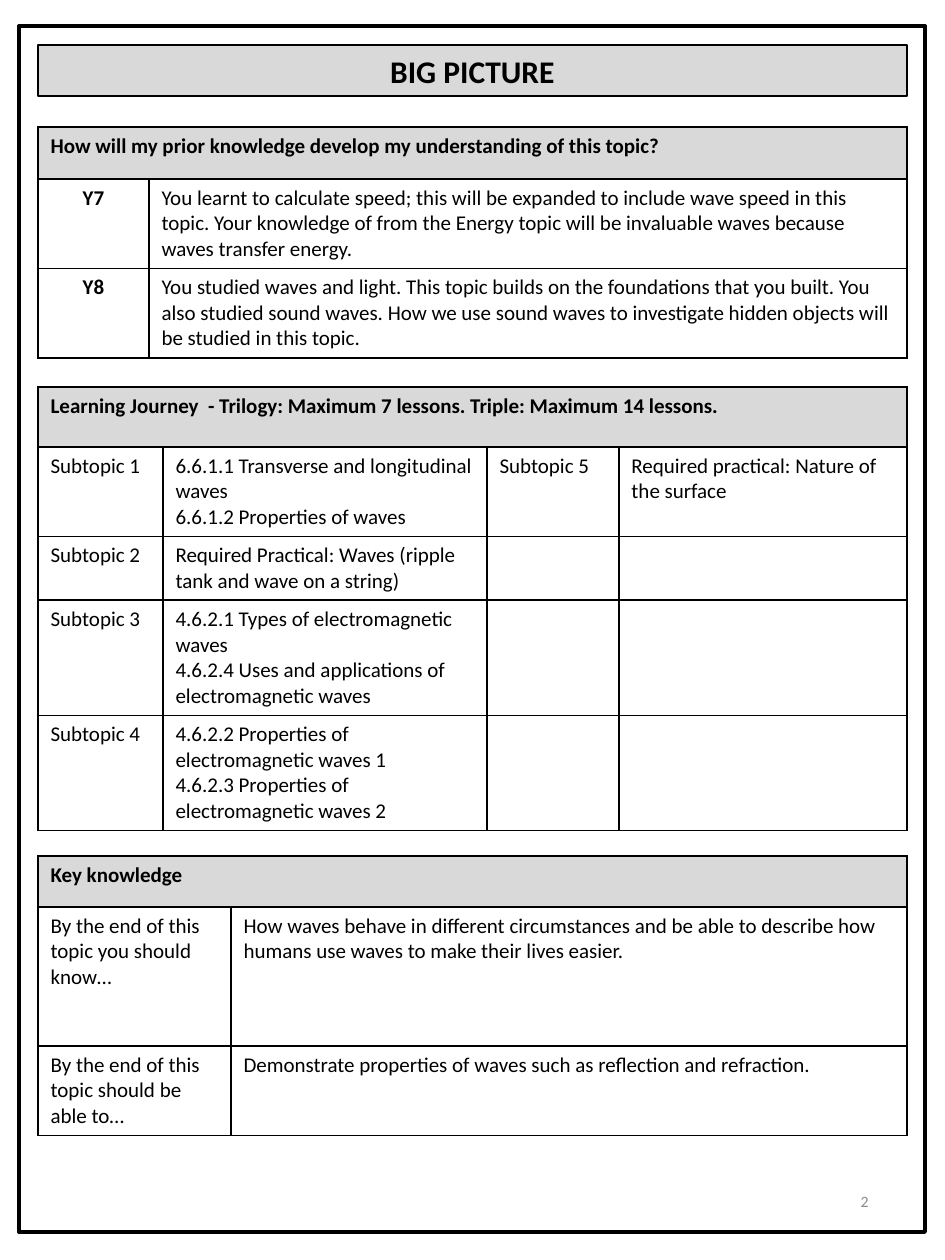
"""Build a one-page topic overview with a banner and three ruled tables."""
from lxml import etree
from pptx import Presentation
from pptx.dml.color import RGBColor
from pptx.enum.shapes import MSO_SHAPE
from pptx.enum.text import MSO_ANCHOR, PP_ALIGN
from pptx.oxml.ns import qn
from pptx.util import Pt

RECT = MSO_SHAPE.RECTANGLE
MID = MSO_ANCHOR.MIDDLE
LEFT, MIDDLE, RIGHT = PP_ALIGN.LEFT, PP_ALIGN.CENTER, PP_ALIGN.RIGHT

PX = 914400 // 126
WIDE, HIGH = 945, 1260
EDGE = 38
FONT = "Calibri"
INK = {"black": "000000", "band": "D9D9D9", "white": "FFFFFF", "grey": "8C8C8C"}

TITLE = "BIG PICTURE"
PAGE = "2"
TABLES = [
    {
        "head": "How will my prior knowledge develop my understanding of this topic?",
        "top": 127, "cols": [111, 758], "rows": [52, 88, 88],
        "fill": "white", "label": True,
        "body": [
            ["Y7", "You learnt to calculate speed; this will be expanded to include "
             "wave speed in this topic. Your knowledge of from the Energy topic will "
             "be invaluable waves because waves transfer energy."],
            ["Y8", "You studied waves and light. This topic builds on the foundations "
             "that you built. You also studied sound waves. How we use sound waves to "
             "investigate hidden objects will be studied in this topic."],
        ],
    },
    {
        "head": "Learning Journey  - Trilogy: Maximum 7 lessons. Triple: Maximum 14 lessons.",
        "top": 387, "cols": [125, 324, 132, 288], "rows": [60, 88, 63, 114, 113],
        "fill": None, "label": False,
        "body": [
            ["Subtopic 1",
             "6.6.1.1 Transverse and longitudinal waves\n6.6.1.2 Properties of waves",
             "Subtopic 5", "Required practical: Nature of the surface"],
            ["Subtopic 2",
             "Required Practical: Waves (ripple tank and wave on a string)", "", ""],
            ["Subtopic 3",
             "4.6.2.1 Types of electromagnetic waves\n"
             "4.6.2.4 Uses and applications of electromagnetic waves", "", ""],
            ["Subtopic 4",
             "4.6.2.2 Properties of electromagnetic waves 1\n"
             "4.6.2.3 Properties of electromagnetic waves 2", "", ""],
        ],
    },
    {
        "head": "Key knowledge",
        "top": 856, "cols": [193, 676], "rows": [51, 139, 88],
        "fill": None, "label": False,
        "body": [
            ["By the end of this topic you should know…",
             "How waves behave in different circumstances and be able to describe how "
             "humans use waves to make their lives easier."],
            ["By the end of this topic should be able to…",
             "Demonstrate properties of waves such as reflection and refraction."],
        ],
    },
]


def color(name):
    return RGBColor.from_string(INK[name])


def scale(*nums):
    return [num * PX for num in nums]


def write(frame, text, size, bold=False, align=LEFT, ink="black"):
    frame.text = text
    for para in frame.paragraphs:
        para.alignment = align
        for font in [para.font] + [run.font for run in para.runs]:
            font.name, font.size, font.bold = FONT, Pt(size), bold
            font.color.rgb = color(ink)


def paint(item, fill):
    if fill:
        item.fill.solid()
        item.fill.fore_color.rgb = color(fill)
    else:
        item.fill.background()


def box(slide, place, fill, width):
    shape = slide.shapes.add_shape(RECT, *scale(*place))
    shape.shadow.inherit = False
    paint(shape, fill)
    shape.line.color.rgb = color("black")
    shape.line.width = Pt(width)
    return shape


def rule(cell):
    props = cell._tc.get_or_add_tcPr()
    for spot, side in enumerate(("lnL", "lnR", "lnT", "lnB")):
        line = etree.Element(qn("a:" + side), w=str(Pt(1)))
        fill = etree.SubElement(line, qn("a:solidFill"))
        etree.SubElement(fill, qn("a:srgbClr"), val=INK["black"])
        props.insert(spot, line)


def grid(slide, data):
    cols, rows = data["cols"], data["rows"]
    place = scale(EDGE, data["top"], sum(cols), sum(rows))
    table = slide.shapes.add_table(len(rows), len(cols), *place).table
    for col, width in zip(table.columns, cols):
        col.width = width * PX
    for row, height in zip(table.rows, rows):
        row.height = height * PX
    texts = [[data["head"]] + [""] * (len(cols) - 1)] + data["body"]
    for r, line in enumerate(texts):
        for c, text in enumerate(line):
            cell = table.cell(r, c)
            label = data["label"] and r > 0 and c == 0
            write(cell.text_frame, text, 12, r == 0 or label, MIDDLE if label else LEFT)
            paint(cell, data["fill"] if r else "band")
            rule(cell)
    table.cell(0, 0).merge(table.cell(0, len(cols) - 1))


def main():
    deck = Presentation()
    deck.slide_width, deck.slide_height = scale(WIDE, HIGH)
    slide = deck.slides.add_slide(deck.slide_layouts[6])
    box(slide, (19, 26, 906, 1206), None, 2.25)
    banner = box(slide, (EDGE, 45, 869, 51), "band", 0.75)
    write(banner.text_frame, TITLE, 18, True, MIDDLE)
    for data in TABLES:
        grid(slide, data)
    foot = slide.shapes.add_textbox(*scale(668, 1168, 213, 67)).text_frame
    foot.word_wrap = True
    foot.vertical_anchor = MID
    write(foot, PAGE, 9, align=RIGHT, ink="grey")
    deck.save("out.pptx")


if __name__ == "__main__":
    main()
